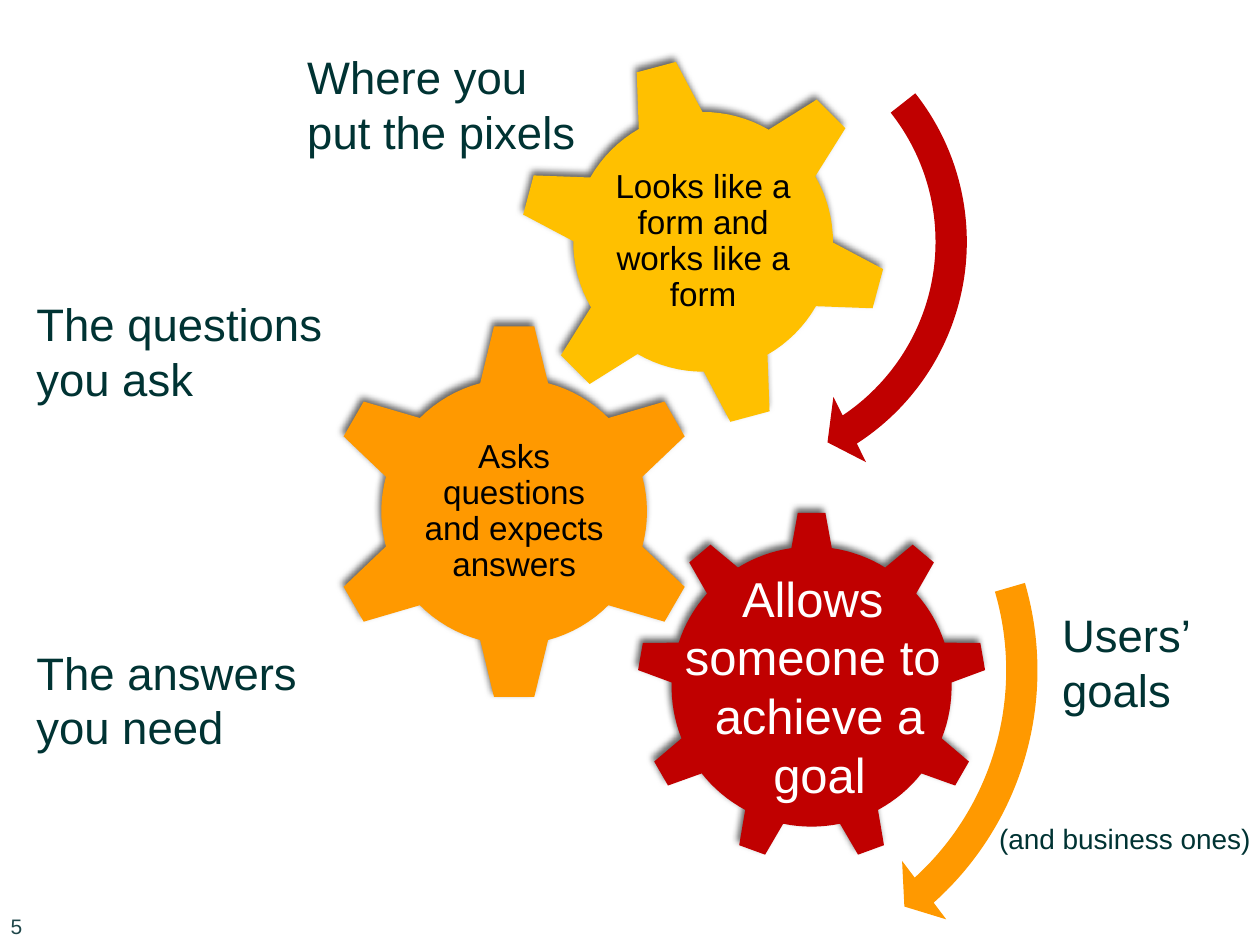
from math import cos, radians, sin

from lxml import etree
from pptx import Presentation
from pptx.dml.color import RGBColor
from pptx.enum.shapes import MSO_SHAPE
from pptx.enum.text import MSO_ANCHOR, PP_ALIGN
from pptx.oxml.ns import qn
from pptx.util import Pt

ARROW = MSO_SHAPE.CIRCULAR_ARROW
TOP, MIDDLE, BOTTOM = MSO_ANCHOR.TOP, MSO_ANCHOR.MIDDLE, MSO_ANCHOR.BOTTOM
LEFT, CENTER = PP_ALIGN.LEFT, PP_ALIGN.CENTER

RED = RGBColor(0xC0, 0x00, 0x00)
ORANGE = RGBColor(0xFF, 0x99, 0x00)
YELLOW = RGBColor(0xFF, 0xC0, 0x00)
INK = RGBColor(0x00, 0x33, 0x33)
SLATE = RGBColor(0x1E, 0x46, 0x49)
BLACK = RGBColor(0x00, 0x00, 0x00)
WHITE = RGBColor(0xFF, 0xFF, 0xFF)


class Deck:
    """Style and current slide."""
    font = "Arial"
    arc_steps = 8

    def __init__(self, slide):
        self.slide = slide

    def style(self, tf, size, color, align=LEFT):
        for p in tf.paragraphs:
            p.alignment = align
            for r in p.runs:
                r.font.name = self.font
                r.font.size = Pt(size)
                r.font.color.rgb = color

    def paint(self, sp, color):
        sp.shadow.inherit = False
        sp.fill.solid()
        sp.fill.fore_color.rgb = color
        sp.line.fill.background()

    def text(self, x, y, w, h, text, size=26, color=INK, align=LEFT, anchor=TOP):
        tf = self.slide.shapes.add_textbox(Pt(x), Pt(y), Pt(w), Pt(h)).text_frame
        tf.word_wrap = True
        tf.vertical_anchor = anchor
        tf.margin_right = 0 if align == LEFT else Pt(7.2)
        tf.text = text
        self.style(tf, size, color, align)
        return tf

    def arrow(self, x, y, size, rotation, adjustments, color):
        sp = self.slide.shapes.add_shape(ARROW, Pt(x), Pt(y), Pt(size), Pt(size))
        sp.rotation = rotation
        for i, value in enumerate(adjustments):
            sp.adjustments[i] = value
        self.paint(sp, color)

    def gear(self, cx, cy, body, tip, teeth, first, base_half, tip_half, color):
        """Teeth at equal angles from first; half angles give tooth widths."""
        def point(radius, angle):
            a = radians(angle)
            return Pt(cx + radius * cos(a)), Pt(cy + radius * sin(a))

        pitch = 360 / teeth
        gap = pitch - 2 * base_half
        points = []
        for i in range(teeth):
            mid = first + i * pitch
            points += [point(tip, mid - tip_half), point(tip, mid + tip_half)]
            points += [point(body, mid + base_half + gap * k / self.arc_steps)
                       for k in range(self.arc_steps + 1)]
        builder = self.slide.shapes.build_freeform(*points[0])
        builder.add_line_segments(points[1:], close=True)
        sp = builder.convert_to_shape()
        self.paint(sp, color)

        # Soft shadow towards the upper left
        effects = sp._element.spPr.find(qn("a:effectLst"))
        shadow = etree.SubElement(effects, qn("a:outerShdw"), blurRad=str(Pt(4)),
                                  dist=str(Pt(3)), dir=str(245 * 60000),
                                  algn="ctr", rotWithShape="0")
        black = etree.SubElement(shadow, qn("a:srgbClr"), val="000000")
        etree.SubElement(black, qn("a:alpha"), val="60000")
        return sp

    def gear_label(self, sp, text, half):
        """Centre text in a square of twice the half width."""
        tf = sp.text_frame
        tf.word_wrap = True
        tf.vertical_anchor = MIDDLE
        tf.margin_left = tf.margin_right = sp.width // 2 - Pt(half)
        tf.margin_top = tf.margin_bottom = sp.height // 2 - Pt(half)
        tf.text = text
        self.style(tf, 19, BLACK, CENTER)
        tf.paragraphs[0].line_spacing = 0.9


def main():
    prs = Presentation()
    prs.slide_width, prs.slide_height = Pt(720), Pt(540)
    deck = Deck(prs.slides.add_slide(prs.slide_layouts[6]))

    # Slide number
    deck.text(-1, 502.6, 44, 37.4, "5", 12, SLATE, anchor=BOTTOM)

    # Goal gear
    deck.gear(463.8, 392.4, 80, 99.6, 9, -90, 8.3, 4.55, RED)
    deck.arrow(224.6, 193, 380.2, 5.3,
               (0.047, 2.99, 25.567, 203.035, 0.055), ORANGE)
    tf = deck.text(563.8, 343.4, 156, 152.6, "Users’\vgoals\n(and business ones)")
    goals, business = tf.paragraphs
    goals._p.get_or_add_pPr().set("marL", str(Pt(36)))
    business.space_before = Pt(60)
    business.runs[0].font.size = Pt(16)
    deck.text(381, 321.1, 174.6, 143.3, "Allows \vsomeone to \vachieve a\ngoal",
              28, WHITE, CENTER)

    # Questions gear
    sp = deck.gear(293.8, 292.4, 75.9, 106.5, 6, -90, 14.8, 6.2, ORANGE)
    deck.gear_label(sp, "Asks questions and expects answers", 52)
    deck.text(13.7, 365, 180, 70.6, "The answers \vyou need")
    deck.text(13.7, 165.6, 185, 70.6, "The questions\vyou ask")

    # Form gear
    sp = deck.gear(401.8, 138.2, 74.2, 104, 6, -45, 14.7, 6.4, YELLOW)
    deck.gear_label(sp, "Looks like a form and works like a form", 57.6)
    deck.arrow(266.4, -10.8, 298, 194.9,
               (0.06, 3.941, 133.138, 76.099, 0.07), RED)
    deck.text(168.5, 24.5, 175, 70.6, "Where you\nput the pixels")

    prs.save("out.pptx")


if __name__ == "__main__":
    main()
